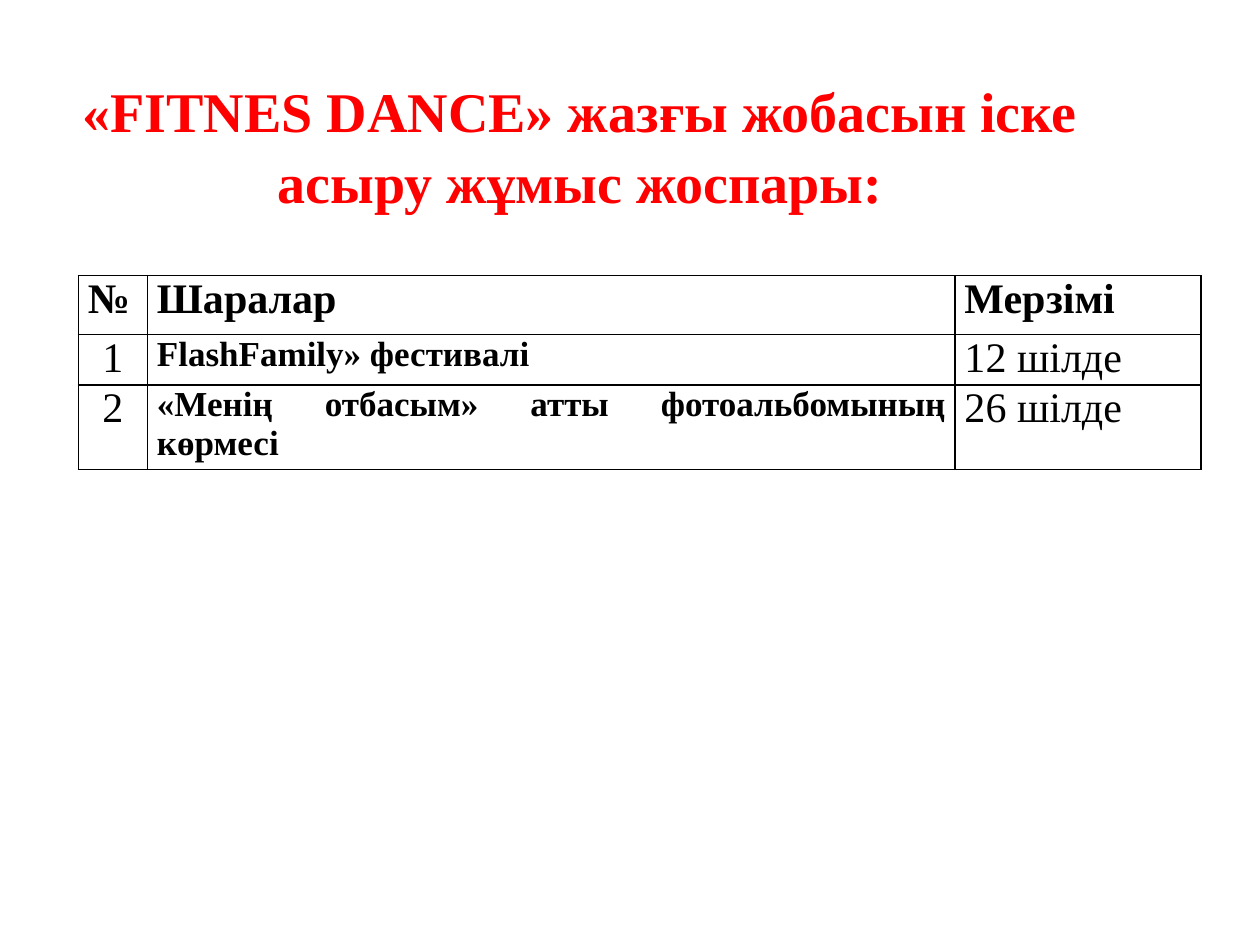
from lxml import etree
from pptx import Presentation
from pptx.dml.color import RGBColor
from pptx.enum.text import MSO_ANCHOR, PP_ALIGN
from pptx.oxml.ns import qn
from pptx.util import Pt

LEFT, CENTER, JUSTIFY = PP_ALIGN.LEFT, PP_ALIGN.CENTER, PP_ALIGN.JUSTIFY
MIDDLE = MSO_ANCHOR.MIDDLE
RED = RGBColor(0xFF, 0x00, 0x00)
BLACK = RGBColor(0x00, 0x00, 0x00)
FONT = "Times New Roman"

TITLE = "«FITNES DANCE» жазғы жобасын іске асыру жұмыс жоспары:"
COLUMN_WIDTHS = (39.5, 461.5, 140.5)
ROW_HEIGHTS = (33.8, 28.8, 48)
HEADER = [(label, JUSTIFY, 24, True) for label in ("№", "Шаралар", "Мерзімі")]
EVENTS = (
    ("1", "FlashFamily» фестивалі", LEFT, "12 шілде"),
    ("2", "«Менің отбасым» атты фотоальбомының көрмесі", JUSTIFY, "26 шілде"),
)


def style_paragraph(para, align, size, bold, color):
    """Set the alignment of a paragraph and the font of its runs."""
    para.alignment = align
    for span in para.runs:
        span.font.name = FONT
        span.font.size = Pt(size)
        span.font.bold = bold
        span.font.color.rgb = color


def add_title(page):
    """Add the centred red heading."""
    box = page.shapes.add_textbox(Pt(16.5), Pt(39.5), Pt(630), Pt(85))
    frame = box.text_frame
    frame.word_wrap = True
    frame.vertical_anchor = MIDDLE
    frame.text = TITLE
    para = frame.paragraphs[0]
    para.line_spacing = 1.06
    style_paragraph(para, CENTER, 32, True, RED)


def add_borders(cell):
    """Draw a thin black line on each side of a cell."""
    properties = cell._tc.get_or_add_tcPr()
    for position, side in enumerate(("a:lnL", "a:lnR", "a:lnT", "a:lnB")):
        line = etree.Element(qn(side), w=str(Pt(1)))
        fill = etree.SubElement(line, qn("a:solidFill"))
        etree.SubElement(fill, qn("a:srgbClr"), val=str(BLACK))
        properties.insert(position, line)


def fill_cell(cell, text, align, size, bold):
    """Write one table cell with its margins and borders."""
    cell.margin_left = cell.margin_right = Pt(5.4)
    cell.margin_top = cell.margin_bottom = Pt(0)
    cell.fill.background()
    cell.text = text
    style_paragraph(cell.text_frame.paragraphs[0], align, size, bold, BLACK)
    add_borders(cell)


def add_plan(page):
    """Add the table of events and their dates."""
    rows = [HEADER]
    for number, event, align, date in EVENTS:
        rows.append([(number, CENTER, 24, False), (event, align, 20, True),
                     (date, JUSTIFY, 24, False)])
    table = page.shapes.add_table(
        len(rows), len(COLUMN_WIDTHS), Pt(44.8), Pt(157.5),
        Pt(sum(COLUMN_WIDTHS)), Pt(sum(ROW_HEIGHTS))).table
    table.first_row = table.horz_banding = False
    for column, width in zip(table.columns, COLUMN_WIDTHS):
        column.width = Pt(width)
    for row, height, entries in zip(table.rows, ROW_HEIGHTS, rows):
        row.height = Pt(height)
        for cell, entry in zip(row.cells, entries):
            fill_cell(cell, *entry)


def main():
    """Build the work plan slide and save it."""
    deck = Presentation()
    deck.slide_width, deck.slide_height = Pt(720), Pt(540)
    page = deck.slides.add_slide(deck.slide_layouts[6])
    add_title(page)
    add_plan(page)
    deck.save("out.pptx")


if __name__ == "__main__":
    main()
